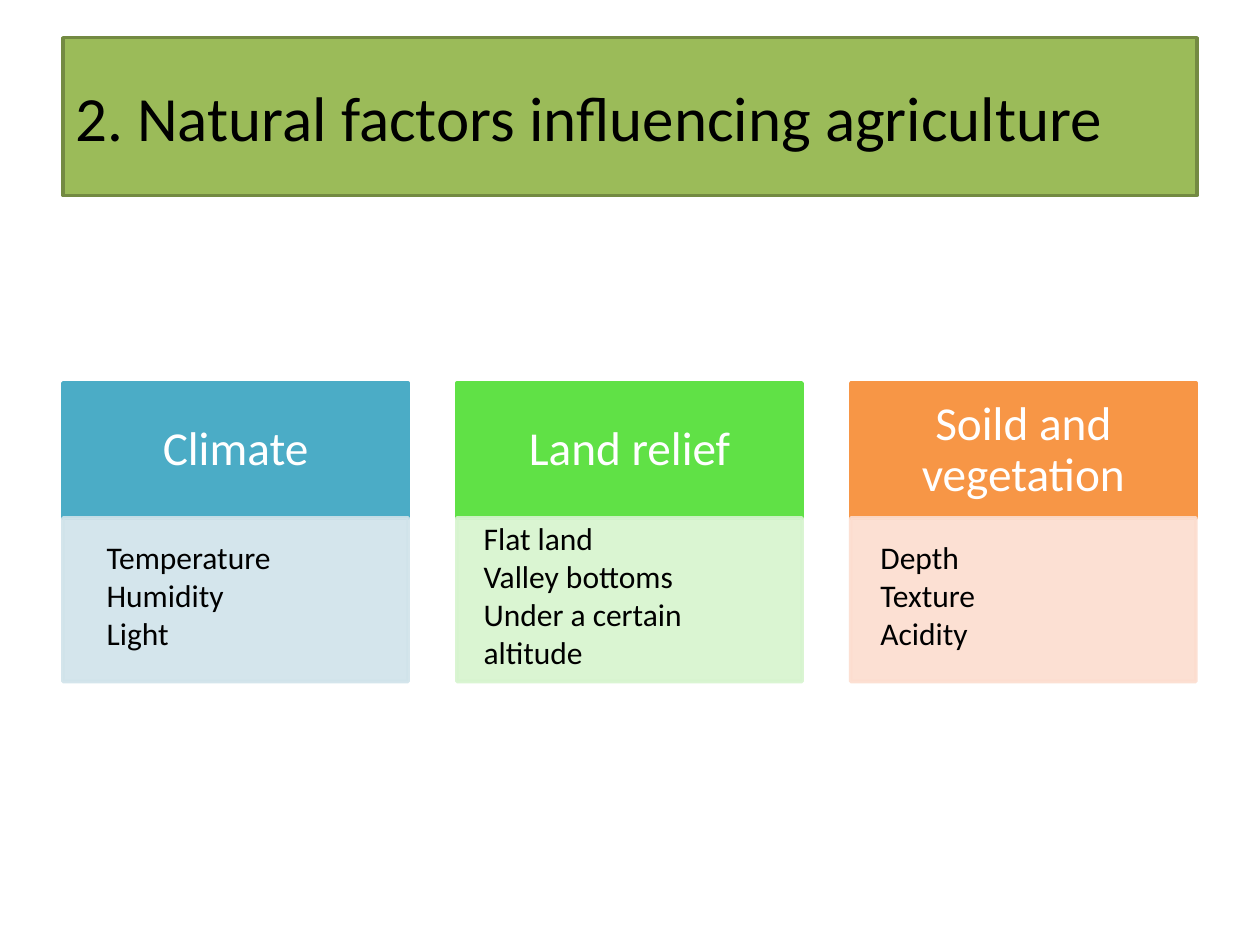
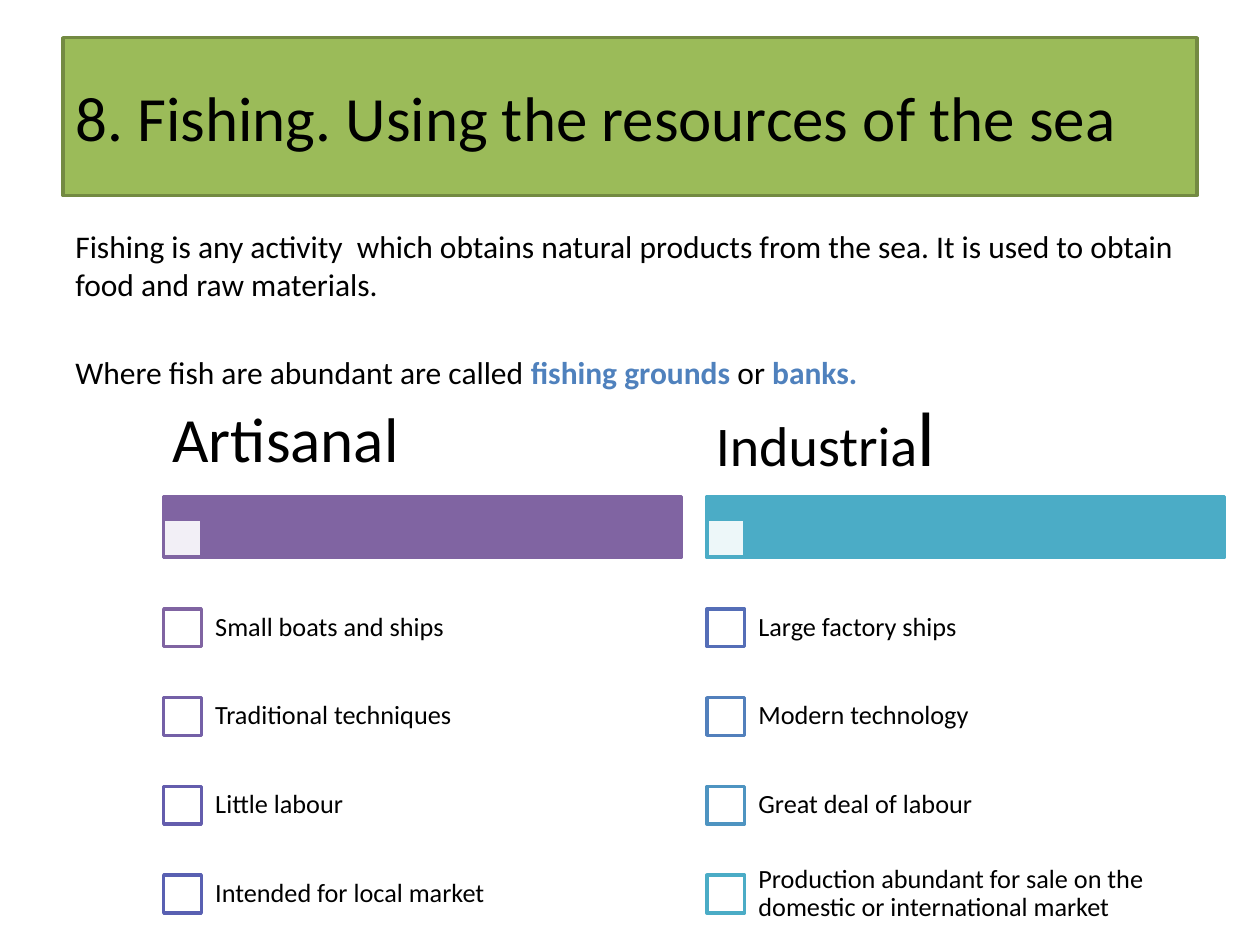
from dataclasses import dataclass

from lxml.etree import SubElement
from pptx import Presentation
from pptx.dml.color import RGBColor
from pptx.enum.shapes import MSO_SHAPE
from pptx.enum.text import MSO_ANCHOR, PP_ALIGN
from pptx.oxml.ns import qn
from pptx.presentation import Presentation as Deck
from pptx.shapes.autoshape import Shape
from pptx.slide import Slide
from pptx.util import Cm, Pt

FONT = "Calibri"
BLACK, WHITE, BLUE = "000000", "FFFFFF", "4F81BD"
GREEN, DARK_GREEN = "9BBB59", "738A42"
PURPLE, TEAL = "8064A2", "4BACC6"
LEFT_MARGIN = 1.27


@dataclass(frozen=True)
class Box:
    """A place on the slide in centimetres."""

    left: float
    top: float
    width: float
    height: float


@dataclass(frozen=True)
class Run:
    """A piece of text with one look."""

    text: str
    size: float
    color: str = BLACK
    bold: bool = False


@dataclass(frozen=True)
class Layout:
    """How text sits in its shape, with insets in centimetres."""

    anchor: MSO_ANCHOR = MSO_ANCHOR.MIDDLE
    align: PP_ALIGN = PP_ALIGN.LEFT
    inset_x: float = 0.25
    inset_y: float = 0.13
    line_spacing: float = 1.0
    gap: float = 0


@dataclass(frozen=True)
class Factor:
    """A natural factor: heading card, pale panel and list."""

    heading: str
    color: str
    pale: str
    items: tuple[str, ...]
    list_left: float
    list_top: float


@dataclass(frozen=True)
class FishingType:
    """A kind of fishing with its heading and checklist."""

    heading: tuple[Run, ...]
    color: str
    items: tuple[tuple[str, str], ...]


PLAIN = Layout(anchor=MSO_ANCHOR.TOP)
TITLE = Layout()
CARD = Layout(align=PP_ALIGN.CENTER, inset_x=0.53, inset_y=0.3, line_spacing=0.9)
HEADING = Layout(inset_x=0.18, inset_y=0.12, line_spacing=0.9)
ITEM = Layout(inset_x=0.3, inset_y=0.3, line_spacing=0.9)
INTRODUCTION = Layout(anchor=MSO_ANCHOR.TOP, gap=29)

FACTORS = (
    Factor("Climate", TEAL, "D0E3EA", ("Temperature", "Humidity", "Light"), 1.9, 10.72),
    Factor("Land relief", "60E146", "D6F4CE",
           ("Flat land", "Valley bottoms", "Under a certain altitude"), 9.5, 10.34),
    Factor("Soild and vegetation", "F79646", "FCDDCF",
           ("Depth", "Texture", "Acidity"), 17.5, 10.72),
)

FISHING_TYPES = (
    FishingType((Run("Artisanal", 36),), PURPLE, (
        ("Small boats and ships", PURPLE),
        ("Traditional techniques", "7460A7"),
        ("Little labour", "645DAD"),
        ("Intended for local market", "5960B2"),
    )),
    FishingType((Run("Industria", 32), Run("l", 44)), TEAL, (
        ("Large factory ships", "556EB7"),
        ("Modern technology", "5280BC"),
        ("Great deal of labour", "4E94C1"),
        ("Production abundant for sale on the domestic or international market", TEAL),
    )),
)

FISHING_TEXT = (
    (Run("Fishing is any activity  which obtains natural products from the sea. "
         "It is used to obtain food and raw materials.", 18),),
    (Run("Where fish are abundant are called ", 18),
     Run("fishing grounds ", 18, BLUE, True),
     Run("or ", 18),
     Run("banks.", 18, BLUE, True)),
)


def rgb(color: str) -> RGBColor:
    """Turn a hex string into a colour."""
    return RGBColor.from_string(color)


def place(box: Box) -> tuple[Cm, Cm, Cm, Cm]:
    """Return the lengths of a box."""
    return Cm(box.left), Cm(box.top), Cm(box.width), Cm(box.height)


def set_opacity(shape: Shape, percent: int) -> None:
    """Make every colour of the fill and line partly transparent."""
    for color in shape.fill._xPr.iter(qn("a:srgbClr")):
        SubElement(color, qn("a:alpha")).set("val", str(percent * 1000))


def add_rectangle(slide: Slide, box: Box, fill: str, line: str) -> Shape:
    """Draw a flat outlined rectangle."""
    shape = slide.shapes.add_shape(MSO_SHAPE.RECTANGLE, *place(box))
    shape.shadow.inherit = False
    shape.fill.solid()
    shape.fill.fore_color.rgb = rgb(fill)
    shape.line.color.rgb = rgb(line)
    shape.line.width = Pt(2)
    return shape


def write(shape: Shape, paragraphs: tuple[tuple[Run, ...], ...], layout: Layout) -> None:
    """Fill a shape with paragraphs, run by run."""
    frame = shape.text_frame
    frame.word_wrap = True
    frame.vertical_anchor = layout.anchor
    frame.margin_left = frame.margin_right = Cm(layout.inset_x)
    frame.margin_top = frame.margin_bottom = Cm(layout.inset_y)
    for index, runs in enumerate(paragraphs):
        paragraph = frame.add_paragraph() if index else frame.paragraphs[0]
        paragraph.alignment = layout.align
        paragraph.line_spacing = layout.line_spacing
        paragraph.space_before = Pt(layout.gap if index else 0)
        for piece in runs:
            run = paragraph.add_run()
            run.text = piece.text
            run.font.name = FONT
            run.font.size = Pt(piece.size)
            run.font.bold = piece.bold
            run.font.color.rgb = rgb(piece.color)


def add_text(slide: Slide, box: Box, paragraphs: tuple[tuple[Run, ...], ...],
             layout: Layout) -> None:
    """Place a text box."""
    write(slide.shapes.add_textbox(*place(box)), paragraphs, layout)


def add_titled_slide(presentation: Deck, title: str) -> Slide:
    """Add a blank slide with the green title band."""
    slide = presentation.slides.add_slide(presentation.slide_layouts[6])
    band = add_rectangle(slide, Box(LEFT_MARGIN, 0.76, 22.86, 3.18), GREEN, DARK_GREEN)
    write(band, ((Run(title, 36),),), TITLE)
    return slide


def add_factor(slide: Slide, left: float, factor: Factor) -> None:
    """Draw one factor column."""
    card = add_rectangle(slide, Box(left, 7.72, 6.96, 2.72), factor.color, factor.color)
    write(card, ((Run(factor.heading, 27, WHITE),),), CARD)
    panel = add_rectangle(slide, Box(left, 10.44, 6.96, 3.3), factor.pale, factor.pale)
    set_opacity(panel, 90)
    items = tuple((Run(item, 18),) for item in factor.items)
    add_text(slide, Box(factor.list_left, factor.list_top, 5.59, 2.57), items, PLAIN)


def add_fishing_type(slide: Slide, left: float, fishing: FishingType) -> None:
    """Draw one heading, its bar and its checklist."""
    square, row_height, first_row = 0.76, 1.79, 11.76
    add_rectangle(slide, Box(left, 10.01, 10.44, 1.22), fishing.color, fishing.color)
    marker = add_rectangle(slide, Box(left, 10.47, square, square), WHITE, fishing.color)
    marker.fill.fore_color.rgb = rgb("F2EFF6" if fishing.color == PURPLE else "EDF7F9")
    add_text(slide, Box(left, 7.8, 10.44, 2.21), (fishing.heading,), HEADING)
    for row, (item, color) in enumerate(fishing.items):
        top = first_row + row * row_height
        check_top = top + (row_height - square) / 2
        add_rectangle(slide, Box(left, check_top, square, square), WHITE, color)
        add_text(slide, Box(left + 0.74, top, 9.7, row_height), ((Run(item, 15),),), ITEM)


def main() -> None:
    """Build and save the slides."""
    presentation = Presentation()
    presentation.slide_width, presentation.slide_height = Cm(25.4), Cm(19.05)

    slide = add_titled_slide(presentation, "2. Natural factors influencing agriculture")
    for column, factor in enumerate(FACTORS):
        add_factor(slide, LEFT_MARGIN + column * 7.94, factor)

    slide = add_titled_slide(presentation, "8. Fishing. Using the resources of the sea")
    add_text(slide, Box(LEFT_MARGIN, 4.45, 22.86, 4.09), FISHING_TEXT, INTRODUCTION)
    for column, fishing in enumerate(FISHING_TYPES):
        add_fishing_type(slide, 3.3 + column * 10.95, fishing)

    presentation.save("out.pptx")


if __name__ == "__main__":
    main()
